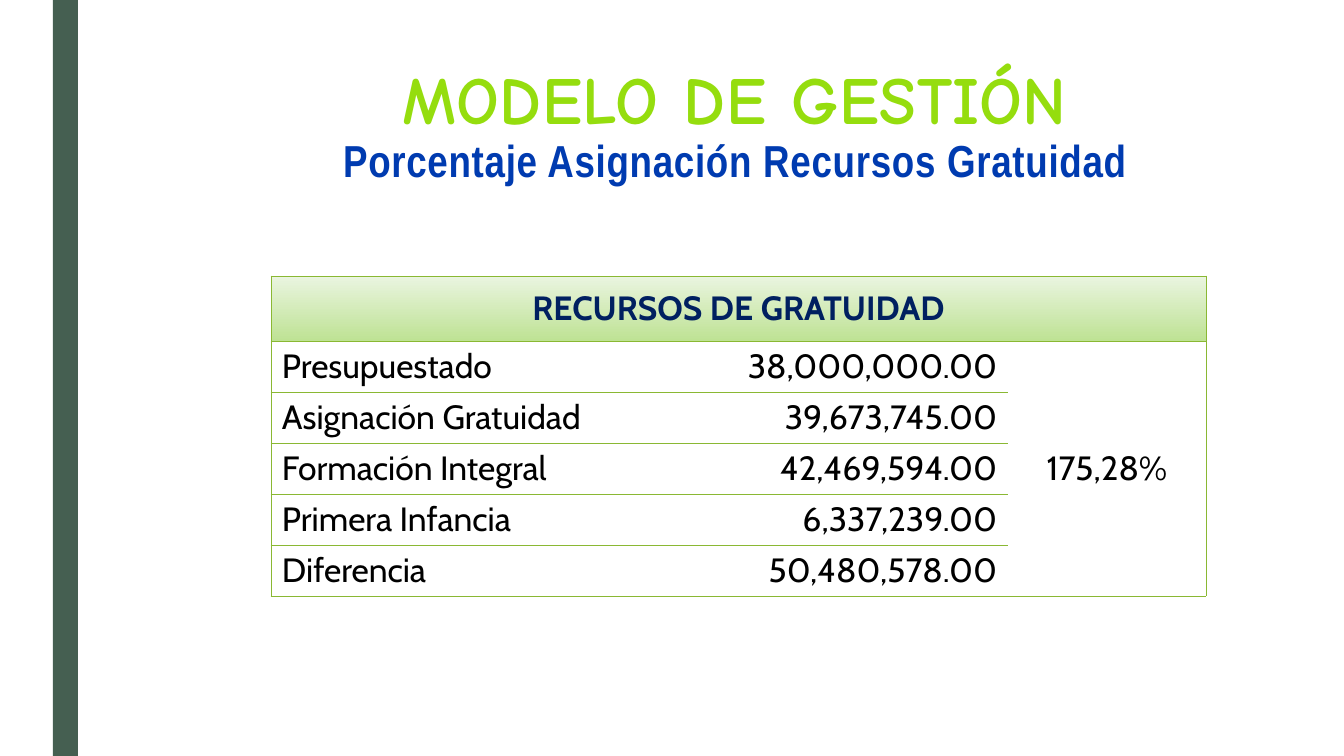
from dataclasses import dataclass

import pptx
import pptx.dml.color
import pptx.enum.shapes
import pptx.enum.text
import pptx.oxml
import pptx.oxml.ns
import pptx.util

SCALE = 914400 / 100.8
ALIGN = pptx.enum.text.PP_ALIGN
MIDDLE = pptx.enum.text.MSO_ANCHOR.MIDDLE


@dataclass(frozen=True)
class Theme:
    band: str = "455F51"
    lime: str = "95DD0E"
    blue: str = "003BB0"
    navy: str = "002060"
    ink: str = "000000"
    edge: str = "8AB833"
    deep: str = "BEE294"
    pale: str = "EAF5E0"
    head: int = 48
    sub: int = 32
    body: int = 24


@dataclass(frozen=True)
class Style:
    font: str
    size: int
    tint: str
    bold: bool = False
    space: int = 0


@dataclass(frozen=True)
class Entry:
    row: int
    col: int
    text: str
    style: Style
    align: ALIGN = ALIGN.LEFT


THEME = Theme()
HEAD = Style("Comic Neue", THEME.head, THEME.lime, True, 50)
SUB = Style("Arial Narrow", THEME.sub, THEME.blue, True, 50)
CAP = Style("Cabin", THEME.body, THEME.navy, True)
BODY = Style("Cabin", THEME.body, THEME.ink)

FUNDS = [
    ("Presupuestado", "38,000,000.00"),
    ("Asignación Gratuidad", "39,673,745.00"),
    ("Formación Integral", "42,469,594.00"),
    ("Primera Infancia", "6,337,239.00"),
    ("Diferencia", "50,480,578.00"),
]
WIDTHS = [464, 273, 198]
HEIGHTS = [65] + [51] * len(FUNDS)


def px(count: int) -> pptx.util.Emu:
    return pptx.util.Emu(round(count * SCALE))


def color(code: str) -> pptx.dml.color.RGBColor:
    return pptx.dml.color.RGBColor.from_string(code)


def write(para, text: str, style: Style) -> None:
    run = para.add_run()
    run.text = text
    run.font.name = style.font
    run.font.size = pptx.util.Pt(style.size)
    run.font.bold = style.bold
    run.font.color.rgb = color(style.tint)
    if style.space:
        run.font._element.set("spc", str(style.space))


def draw_band(slide) -> None:
    band = slide.shapes.add_shape(
        pptx.enum.shapes.MSO_SHAPE.RECTANGLE, px(53), 0, px(25), px(756))
    band.shadow.inherit = False
    band.fill.solid()
    band.fill.fore_color.rgb = color(THEME.band)
    band.line.fill.background()


def draw_title(slide) -> None:
    box = slide.shapes.add_textbox(px(161), px(71), px(1149), px(112))
    frame = box.text_frame
    frame.word_wrap = True
    frame.vertical_anchor = MIDDLE
    para = frame.paragraphs[0]
    para.alignment = ALIGN.CENTER
    para.line_spacing = 0.89
    write(para, "MODELO DE GESTIÓN", HEAD)
    para.add_line_break()
    write(para, "Porcentaje Asignación Recursos Gratuidad", SUB)


def rule_cell(cell, row: int, col: int) -> None:
    last = len(HEIGHTS) - 1
    sides = {
        "L": col == 0,
        "R": col == 2 or (row, col) == (0, 0),
        "T": col < 2 or row < 2,
        "B": col < 2 or row in (0, 1, last),
    }
    props = cell._tc.get_or_add_tcPr()
    space = pptx.oxml.ns.nsdecls("a")
    for side, shown in sides.items():
        fill = (f'<a:solidFill><a:srgbClr val="{THEME.edge}"/></a:solidFill>'
                if shown else "<a:noFill/>")
        props.append(pptx.oxml.parse_xml(
            f'<a:ln{side} {space} w="6350">{fill}</a:ln{side}>'))


def fill_cell(cell, row: int) -> None:
    if row:
        cell.fill.background()
        return
    cell.fill.gradient()
    cell.fill.gradient_angle = 90
    for stop, code in zip(cell.fill.gradient_stops, (THEME.deep, THEME.pale)):
        stop.color.rgb = color(code)


def draw_table(slide) -> None:
    frame = slide.shapes.add_table(
        len(HEIGHTS), len(WIDTHS), px(271), px(276),
        px(sum(WIDTHS)), px(sum(HEIGHTS)))
    table = frame.table
    table.first_row = False
    table.horz_banding = False
    for col, width in enumerate(WIDTHS):
        table.columns[col].width = px(width)
    for row, height in enumerate(HEIGHTS):
        table.rows[row].height = px(height)
        for col in range(len(WIDTHS)):
            cell = table.cell(row, col)
            rule_cell(cell, row, col)
            fill_cell(cell, row)
    table.cell(0, 0).merge(table.cell(0, 2))
    table.cell(1, 2).merge(table.cell(len(FUNDS), 2))

    items = [
        Entry(0, 0, "RECURSOS DE GRATUIDAD", CAP, ALIGN.CENTER),
        Entry(1, 2, "175,28%", BODY, ALIGN.CENTER),
    ]
    for row, (name, sum_) in enumerate(FUNDS, 1):
        items += [Entry(row, 0, name, BODY),
                  Entry(row, 1, sum_, BODY, ALIGN.RIGHT)]
    for item in items:
        cell = table.cell(item.row, item.col)
        cell.vertical_anchor = MIDDLE
        cell.margin_left = cell.margin_right = px(11)
        cell.margin_top = cell.margin_bottom = px(5)
        para = cell.text_frame.paragraphs[0]
        para.alignment = item.align
        write(para, item.text, item.style)


def main() -> None:
    deck = pptx.Presentation()
    deck.slide_width = px(1344)
    deck.slide_height = px(756)
    slide = deck.slides.add_slide(deck.slide_layouts[6])
    draw_band(slide)
    draw_title(slide)
    draw_table(slide)
    deck.save("out.pptx")


if __name__ == "__main__":
    main()
